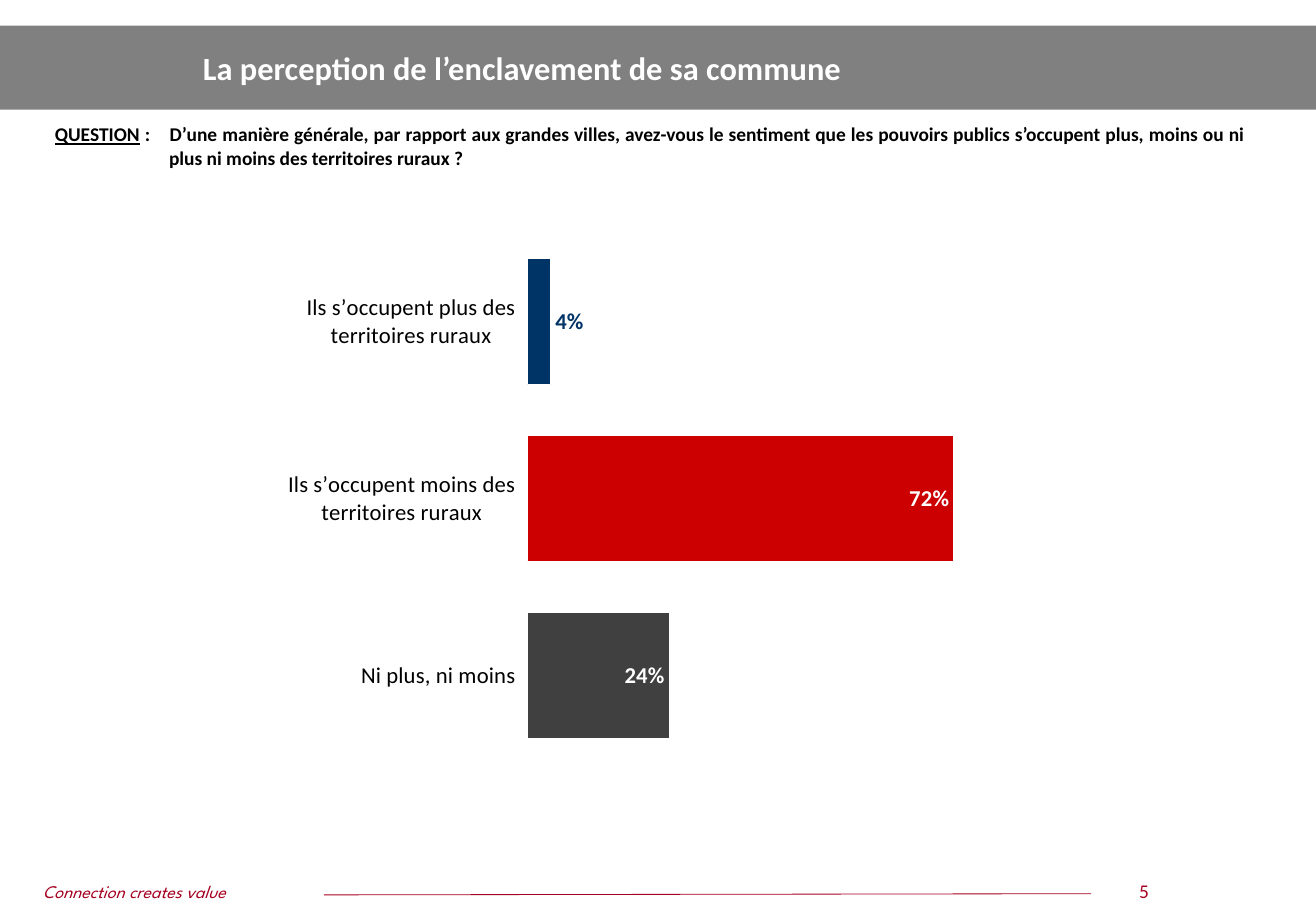
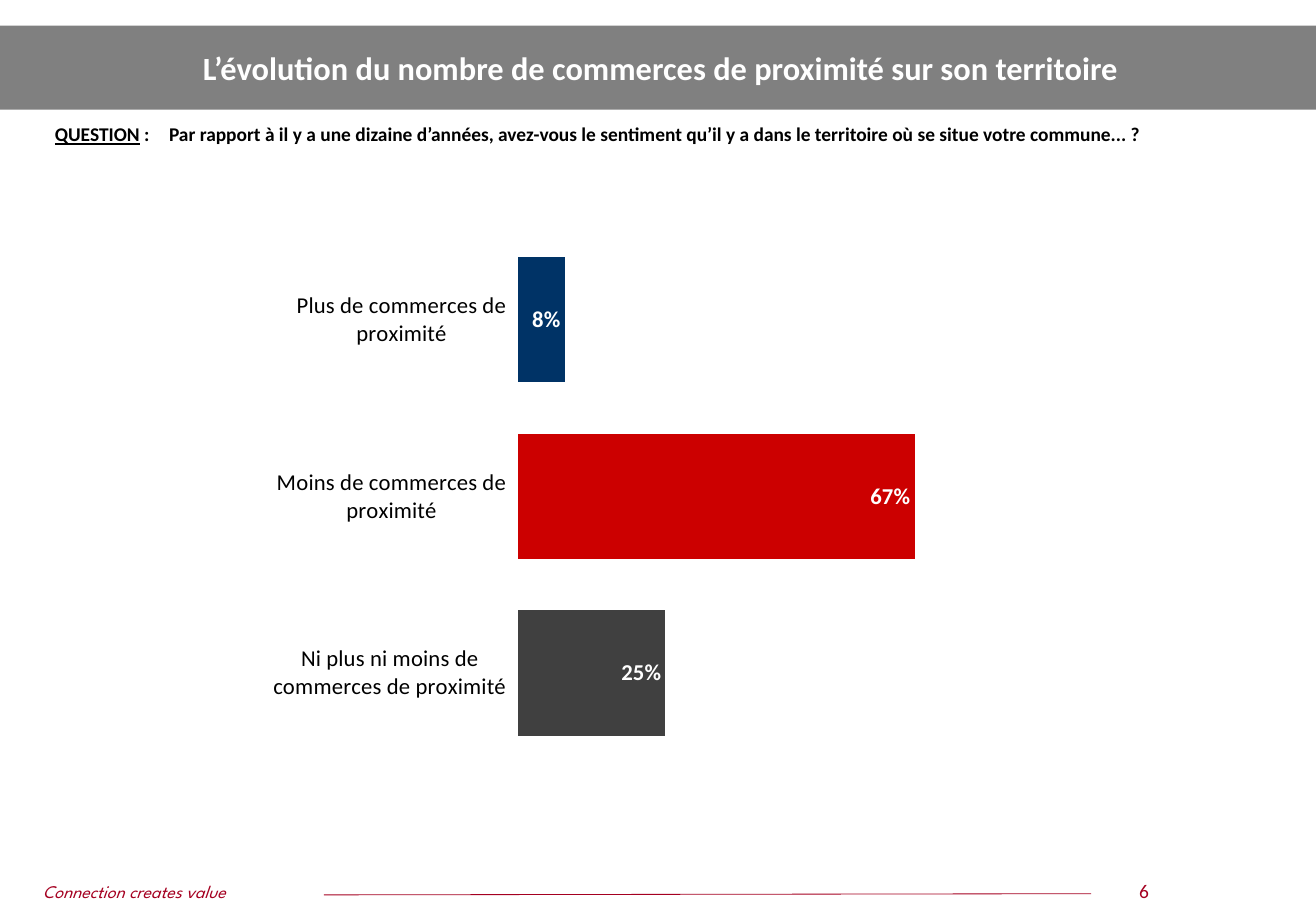
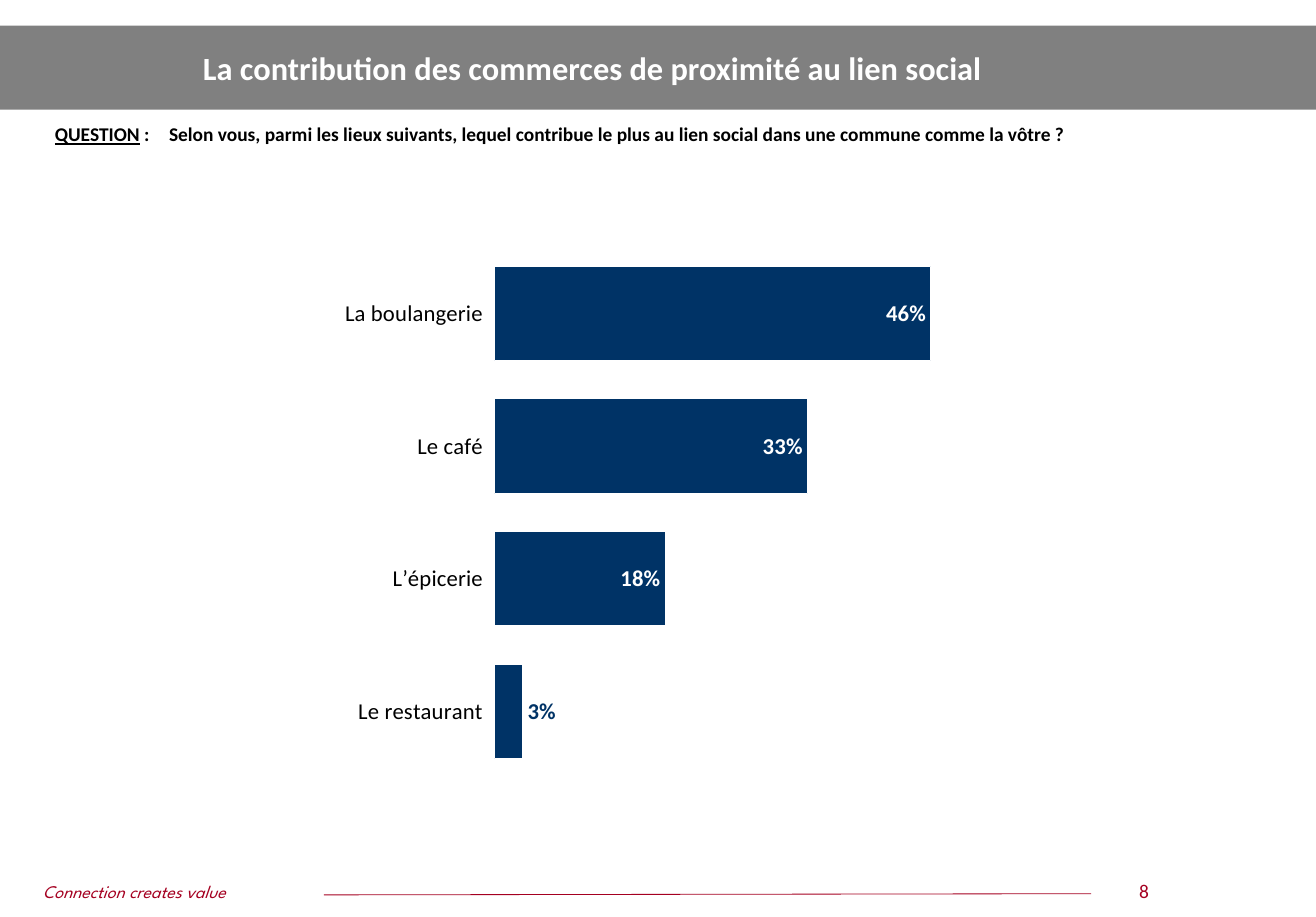
from lxml.etree import SubElement
from pptx import Presentation
from pptx.chart.data import CategoryChartData
from pptx.dml.color import RGBColor
from pptx.enum.chart import XL_CHART_TYPE as ChartType
from pptx.enum.chart import XL_LABEL_POSITION as LabelPosition
from pptx.enum.chart import XL_TICK_MARK as TickMark
from pptx.enum.shapes import MSO_CONNECTOR as Connector
from pptx.enum.shapes import MSO_SHAPE as Shape
from pptx.enum.text import MSO_ANCHOR as Anchor
from pptx.enum.text import MSO_AUTO_SIZE as AutoSize
from pptx.enum.text import PP_ALIGN as Align
from pptx.oxml import parse_xml
from pptx.oxml.ns import nsdecls, qn
from pptx.util import Inches, Pt

WHITE, BLACK, GREY, WINE = "FFFFFF", "000000", "808080", "A50021"
NAVY, RED, CHARCOAL = "003366", "CC0000", "404040"
MORE_LESS_SAME = [NAVY, RED, CHARCOAL]

SURVEY = [
    {
        "title": "La perception de l’enclavement de sa commune",
        "question": "D’une manière générale, par rapport aux grandes villes, avez-vous le sentiment que "
                    "les pouvoirs publics s’occupent plus, moins ou ni plus ni moins des territoires ruraux ?",
        "lines": 2,
        "number": 5,
        "answers": {
            "Ils s’occupent plus des territoires ruraux": 0.04,
            "Ils s’occupent moins des territoires ruraux": 0.72,
            "Ni plus, ni moins": 0.24,
        },
        "colors": MORE_LESS_SAME,
        "maximum": 0.8,
        "corner": (18.95, 24.27),
    },
    {
        "title": "L’évolution du nombre de commerces de proximité sur son territoire",
        "question": "Par rapport à il y a une dizaine d’années, avez-vous le sentiment qu’il y a dans le "
                    "territoire où se situe votre commune... ?",
        "lines": 1,
        "number": 6,
        "answers": {
            "Plus de commerces de proximité": 0.08,
            "Moins de commerces de proximité": 0.67,
            "Ni plus ni moins de commerces de proximité": 0.25,
        },
        "colors": MORE_LESS_SAME,
        "maximum": 0.8,
        "corner": (18.25, 24.02),
    },
    {
        "title": "La contribution des commerces de proximité au lien social",
        "question": "Selon vous, parmi les lieux suivants, lequel contribue le plus au lien social dans "
                    "une commune comme la vôtre ?",
        "lines": 1,
        "number": 8,
        "answers": {
            "La boulangerie": 0.46,
            "Le café": 0.33,
            "L’épicerie": 0.18,
            "Le restaurant": 0.03,
        },
        "colors": [NAVY] * 4,
        "maximum": 0.5,
        "corner": (16.47, 25.79),
    },
]


def paint(color_format, color):
    color_format.rgb = RGBColor.from_string(color)


def set_format(target, **values):
    for name, value in values.items():
        if name == "color":
            paint(target.color, value)
        else:
            setattr(target, name, value)


def fill_with(fill, color):
    fill.solid()
    paint(fill.fore_color, color)


class Deck:
    FONT = "Calibri"
    TITLE = {"name": FONT, "size": Pt(20), "bold": True, "color": WHITE}
    QUESTION = {"name": FONT, "size": Pt(12), "bold": True, "color": BLACK}
    SLOGAN = {"name": "League Spartan", "size": Pt(11), "italic": True, "color": WINE}
    NUMBER = {"name": FONT, "size": Pt(12), "color": WINE}
    AXIS = {"name": FONT, "size": Pt(14), "bold": False, "color": BLACK}
    LABEL = {"name": FONT, "size": Pt(14), "bold": True, "color": WHITE}
    OUTSIDE_BELOW = 0.05

    def __init__(self):
        self.presentation = Presentation()
        set_format(self.presentation, slide_width=Inches(11.29), slide_height=Inches(7.87))
        self.slide = None

    def share(self, x, y):
        return (int(self.presentation.slide_width * x / 100),
                int(self.presentation.slide_height * y / 100))

    def box(self, left, top, width, height):
        return self.share(left, top) + self.share(width, height)

    def new_slide(self):
        self.slide = self.presentation.slides.add_slide(self.presentation.slide_layouts[5])

    def band(self):
        band = self.slide.shapes.add_shape(Shape.RECTANGLE, *self.box(0, 2.8, 100, 9.15))
        band.shadow.inherit = False
        fill_with(band.fill, GREY)
        band.line.fill.background()
        self.slide.shapes.element.insert(2, band.element)

    def title(self, text):
        title = self.slide.shapes.title
        left, top, width, height = self.box(14.53, 2.8, 83.97, 9.15)
        set_format(title, left=left, top=top, width=width, height=height)
        set_format(title.text_frame, text=text, word_wrap=True,
                   auto_size=AutoSize.NONE, vertical_anchor=Anchor.MIDDLE)
        paragraph = title.text_frame.paragraphs[0]
        paragraph.alignment = Align.JUSTIFY
        set_format(paragraph.runs[0].font, **self.TITLE)

    def text(self, place, runs, align=Align.LEFT, **frame_format):
        shape = self.slide.shapes.add_textbox(*self.box(*place))
        set_format(shape.text_frame, word_wrap=True, **frame_format)
        paragraph = shape.text_frame.paragraphs[0]
        paragraph.alignment = align
        for content, font_format in runs:
            run = paragraph.add_run()
            run.text = content
            set_format(run.font, **font_format)
        return paragraph

    def question(self, text, lines):
        runs = [("QUESTION", {**self.QUESTION, "underline": True}), (f" :\t{text}", self.QUESTION)]
        paragraph = self.text((3.37, 12.83, 94.51, 1.02 + 2.54 * lines), runs, Align.JUSTIFY,
                              margin_left=Inches(0.09), margin_right=Inches(0.36),
                              margin_top=Inches(0.04), margin_bottom=Inches(0.04))
        hang = Inches(0.98)
        properties = paragraph._p.get_or_add_pPr()
        properties.set("marL", str(hang))
        properties.set("indent", str(-hang))

    def footer(self, number):
        self.text((2.39, 95.43, 26.4, 3.68), [("Connection creates value", self.SLOGAN)])
        rule = self.slide.shapes.add_connector(
            Connector.STRAIGHT, *self.share(24.62, 97.59), *self.share(82.91, 97.46))
        set_format(rule.line, color=WINE, width=Pt(0.5))
        SubElement(rule.element.spPr, qn("a:effectLst"))
        self.text((84.32, 95.3, 5.23, 3.81), [(str(number), self.NUMBER)], Align.CENTER)

    def bar_chart(self, answers, colors, maximum, corner):
        data = CategoryChartData(number_format="0%")
        data.categories = list(answers)
        data.add_series("Series 1", list(answers.values()))
        chart = self.slide.shapes.add_chart(
            ChartType.BAR_CLUSTERED, *self.box(*corner, 59.79, 59.09), data).chart
        set_format(chart, has_legend=False, has_title=False)
        set_format(chart.font, **self.AXIS)
        self.plot_area(chart, x=0.353, y=0.02, w=0.603, h=0.979)

        set_format(chart.category_axis, reverse_order=True, has_major_gridlines=False,
                   major_tick_mark=TickMark.OUTSIDE)
        chart.category_axis.format.line.fill.background()
        set_format(chart.category_axis.tick_labels.font, **self.AXIS)
        set_format(chart.value_axis, visible=False, has_major_gridlines=False,
                   minimum_scale=0, maximum_scale=maximum)

        plot = chart.plots[0]
        set_format(plot, gap_width=40, vary_by_categories=False)
        series = plot.series[0]
        self.bar(series, NAVY)
        set_format(series.data_labels, show_value=True, position=LabelPosition.INSIDE_END,
                   number_format="0%", number_format_is_linked=False)
        set_format(series.data_labels.font, **self.LABEL)
        for index, (value, color) in enumerate(zip(answers.values(), colors)):
            point = series.points[index]
            if color != NAVY:
                self.bar(point, color)
            if value < self.OUTSIDE_BELOW:
                set_format(point.data_label.font, **{**self.LABEL, "color": color})
                point.data_label.position = LabelPosition.OUTSIDE_END

    def bar(self, target, color):
        fill_with(target.format.fill, color)
        set_format(target.format.line, color=WHITE, width=Pt(0.75))

    def plot_area(self, chart, **shares):
        area = chart.element.find(".//" + qn("c:plotArea"))
        for layout in area.findall(qn("c:layout")):
            area.remove(layout)
        sizes = "".join(f'<c:{name} val="{value}"/>' for name, value in shares.items())
        area.insert(0, parse_xml(
            f'<c:layout {nsdecls("c")}><c:manualLayout><c:layoutTarget val="inner"/>'
            f'<c:xMode val="edge"/><c:yMode val="edge"/>{sizes}</c:manualLayout></c:layout>'))


def main():
    deck = Deck()
    for page in SURVEY:
        deck.new_slide()
        deck.band()
        deck.footer(page["number"])
        deck.title(page["title"])
        deck.question(page["question"], page["lines"])
        deck.bar_chart(page["answers"], page["colors"], page["maximum"], page["corner"])
    deck.presentation.save("out.pptx")


if __name__ == "__main__":
    main()
